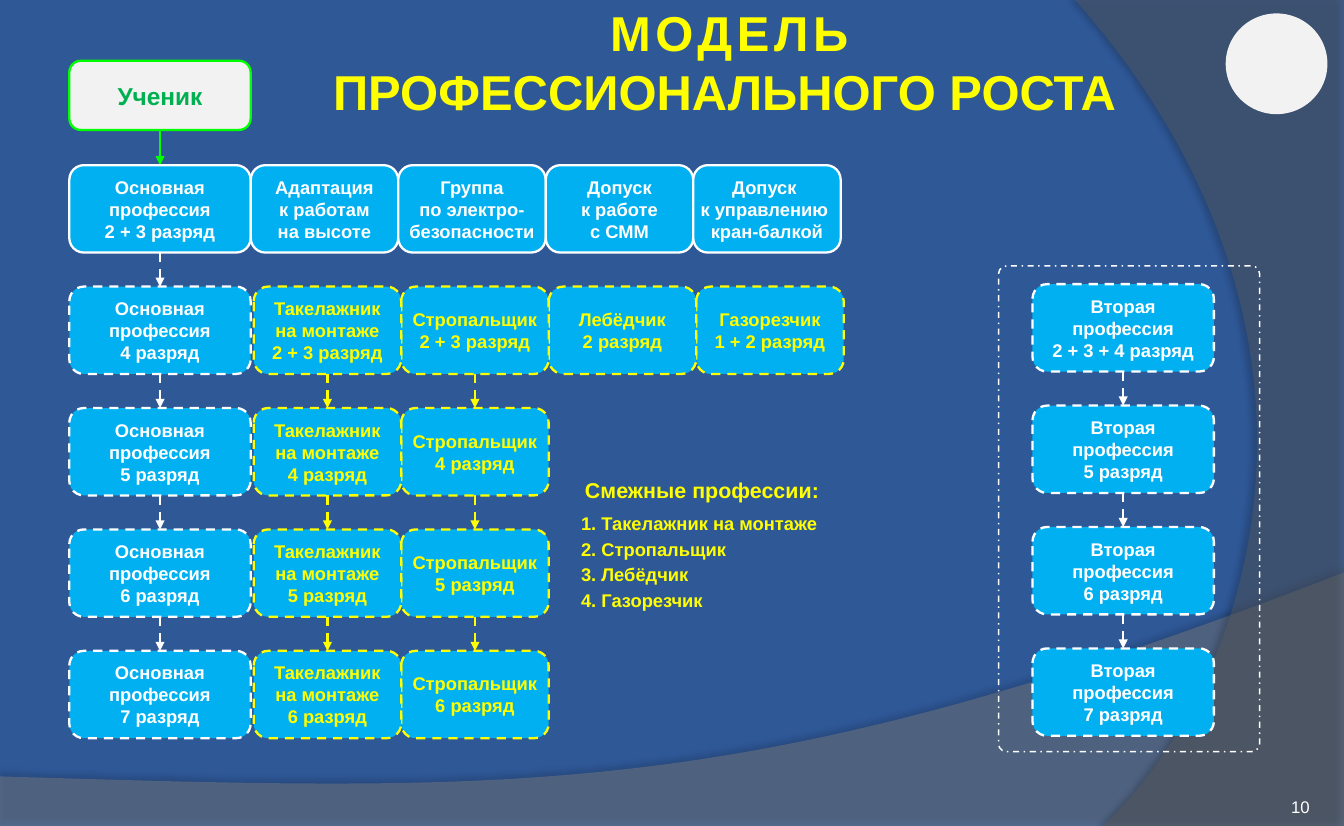
from pptx import Presentation
from pptx.dml.color import RGBColor
from pptx.enum.dml import MSO_LINE
from pptx.enum.shapes import MSO_CONNECTOR, MSO_SHAPE
from pptx.enum.text import MSO_ANCHOR, PP_ALIGN
from pptx.oxml.ns import qn
from pptx.util import Inches, Pt
from lxml.etree import SubElement

NAVY = RGBColor(0x2F, 0x58, 0x97)
SKY = RGBColor(0x00, 0xB0, 0xF0)
WHITE = RGBColor(0xFF, 0xFF, 0xFF)
YELLOW = RGBColor(0xFF, 0xFF, 0x00)
LIME = RGBColor(0x00, 0xFF, 0x00)
GREEN = RGBColor(0x00, 0xB0, 0x50)
PALE = RGBColor(0xF2, 0xF2, 0xF2)
GRAY = RGBColor(0x7F, 0x7F, 0x7F)
DARK_GRAY = RGBColor(0x5E, 0x5E, 0x5E)

WIDTH, HEIGHT = 12.21, 7.5
ORIGIN_X, ORIGIN_Y = 0.63, 1.5
COLUMN, ROW = 1.34, 4.41 / 4
BOX_HEIGHT = 0.72
WIDE = 1.23
RELATED = 1.25
SECOND = 6.53


def curve(start, first, second, end, steps=60):
    points = []
    for step in range(1, steps + 1):
        t = step / steps
        weights = ((1 - t) ** 3, 3 * t * (1 - t) ** 2, 3 * t * t * (1 - t), t ** 3)
        corners = (start, first, second, end)
        points.append(tuple(sum(w * c[axis] for w, c in zip(weights, corners))
                            for axis in (0, 1)))
    return points


class CareerBoard:
    font = "Arial"

    def __init__(self, slide):
        self.slide = slide
        self.shapes = slide.shapes
        slide.background.fill.solid()
        slide.background.fill.fore_color.rgb = NAVY

    def place(self, column, row):
        return Inches(ORIGIN_X + column * COLUMN), Inches(ORIGIN_Y + row * ROW)

    def area(self, column, row, width, height):
        return *self.place(column, row), Inches(width * COLUMN), Inches(height * ROW)

    def set_frame(self, frame, anchor, inset=0.0):
        frame.word_wrap = True
        frame.vertical_anchor = anchor
        frame.margin_left = frame.margin_right = Inches(inset)
        frame.margin_top = frame.margin_bottom = 0

    def add_lines(self, frame, lines, size, ink, align, bold=True):
        for index, text in enumerate(lines):
            paragraph = frame.add_paragraph() if index else frame.paragraphs[0]
            paragraph.alignment = align
            self.add_words(paragraph, text, size, ink, bold)

    def add_words(self, paragraph, text, size, ink, bold=True, spacing=0):
        words = paragraph.add_run()
        words.text = text
        words.font.name = self.font
        words.font.size = Pt(size)
        words.font.bold = bold
        words.font.color.rgb = ink
        if spacing:
            words._r.get_or_add_rPr().set("spc", str(spacing))

    def swoosh(self, points, color, opacity, shadow_opacity, distance, direction):
        (start, *rest) = [(Inches(x * WIDTH / 100), Inches(y * HEIGHT / 100))
                          for x, y in points]
        builder = self.shapes.build_freeform(*start)
        builder.add_line_segments(rest, close=True)
        swoosh = builder.convert_to_shape()
        swoosh.shadow.inherit = False
        swoosh.fill.solid()
        swoosh.fill.fore_color.rgb = color
        swoosh.line.fill.background()
        properties = swoosh._element.spPr
        tint = properties.find(qn("a:solidFill")).find(qn("a:srgbClr"))
        SubElement(tint, qn("a:alpha"), val=str(opacity * 1000))
        shadow = SubElement(properties.find(qn("a:effectLst")), qn("a:outerShdw"),
                            blurRad=str(Pt(4)), dist=str(Pt(distance)),
                            dir=str(direction * 60000), rotWithShape="0")
        shade = SubElement(shadow, qn("a:srgbClr"), val="000000")
        SubElement(shade, qn("a:alpha"), val=str(shadow_opacity * 1000))

    def shape(self, kind, area, fill=None, outline=None, dash=None, weight=1.5):
        shape = self.shapes.add_shape(kind, *self.area(*area))
        shape.shadow.inherit = False
        if fill is None:
            shape.fill.background()
        else:
            shape.fill.solid()
            shape.fill.fore_color.rgb = fill
        if outline is None:
            shape.line.fill.background()
        else:
            shape.line.color.rgb = outline
            shape.line.width = Pt(weight)
            if dash:
                shape.line.dash_style = dash
        return shape

    def box(self, lines, column, row, width=1, ink=WHITE, dash=MSO_LINE.DASH,
            height=BOX_HEIGHT, fill=SKY, outline=None, size=12):
        box = self.shape(MSO_SHAPE.ROUNDED_RECTANGLE, (column, row, width, height),
                         fill, outline or ink, dash)
        self.set_frame(box.text_frame, MSO_ANCHOR.MIDDLE)
        self.add_lines(box.text_frame, lines, size, ink, PP_ALIGN.CENTER)

    def arrow(self, column, top, bottom, color, dash=MSO_LINE.DASH):
        arrow = self.shapes.add_connector(MSO_CONNECTOR.STRAIGHT,
                                          *self.place(column, top),
                                          *self.place(column, bottom))
        arrow.line.color.rgb = color
        arrow.line.width = Pt(1.5)
        if dash:
            arrow.line.dash_style = dash
        properties = arrow._element.spPr
        SubElement(properties.find(qn("a:ln")), qn("a:tailEnd"), type="triangle")
        SubElement(properties, qn("a:effectLst"))

    def ladder(self, name, grades, column, row, width=1, ink=WHITE):
        for step, grade in enumerate(grades):
            if step:
                below = row + step
                self.arrow(column + width / 2, below - 1 + BOX_HEIGHT, below, ink)
            self.box([*name, f"{grade} разряд"], column, row + step, width, ink)

    def label(self, text, area, size, ink, align=PP_ALIGN.LEFT,
              anchor=MSO_ANCHOR.TOP, inset=0.08, bold=True):
        frame = self.shapes.add_textbox(*self.area(*area)).text_frame
        self.set_frame(frame, anchor, inset)
        self.add_lines(frame, [text], size, ink, align, bold)

    def title(self, first, second, area):
        frame = self.shapes.add_textbox(*self.area(*area)).text_frame
        self.set_frame(frame, MSO_ANCHOR.MIDDLE, 0.06)
        heading = frame.paragraphs[0]
        heading.alignment = PP_ALIGN.CENTER
        self.add_words(heading, first, 32, YELLOW, spacing=300)
        heading.add_line_break()
        self.add_words(heading, second, 32, YELLOW)


def main():
    deck = Presentation()
    deck.slide_width, deck.slide_height = Inches(WIDTH), Inches(HEIGHT)
    board = CareerBoard(deck.slides.add_slide(deck.slide_layouts[6]))

    board.swoosh([(0, 94), (0, 100), (100, 100), (100, 69.3),
                  *curve((100, 69.3), (55.9, 97.2), (39.1, 95.9), (0, 94))],
                 GRAY, 45, 35, 3.5, 270)
    board.swoosh([(100, 0), (100, 100), (82.1, 100),
                  *curve((82.1, 100), (93.4, 82.5), (101.7, 40), (80, 0))],
                 DARK_GRAY, 40, 45, 4, 180)
    board.shape(MSO_SHAPE.OVAL, (7.84, -1.25, 0.69, 0.83), PALE)
    board.label("10", (7.65, 5.01, 0.76, 0.36), 11, WHITE, PP_ALIGN.RIGHT,
                MSO_ANCHOR.BOTTOM, 0, False)
    board.title("МОДЕЛЬ", "ПРОФЕССИОНАЛЬНОГО РОСТА ", (1.34, -1.15, 6.3, 0.59))

    board.arrow(WIDE / 2, -0.29, 0, LIME, None)
    board.box(["Ученик"], 0, -0.86, WIDE, GREEN, None, 0.57, PALE, LIME, 16)

    board.box(["Основная", "профессия", "2 + 3 разряд"], 0, 0, WIDE, dash=None)
    board.arrow(WIDE / 2, BOX_HEIGHT, 1, WHITE)
    board.ladder(["Основная", "профессия"], "4567", 0, 1, WIDE)

    permits = [["Адаптация", "к работам", "на высоте"],
               ["Группа", "по электро-", "безопасности"],
               ["Допуск", "к работе", "с СММ"],
               ["Допуск ", "к управлению ", "кран-балкой"]]
    for index, permit in enumerate(permits):
        board.box(permit, WIDE + index, 0, dash=None)

    trades = [(["Газорезчик"], ["1 + 2"], 3),
              (["Лебёдчик"], ["2"], 2),
              (["Стропальщик"], ["2 + 3", "4", "5", "6"], 1),
              (["Такелажник", "на монтаже"], ["2 + 3", "4", "5", "6"], 0)]
    for trade, grades, index in trades:
        board.ladder(trade, grades, RELATED + index, 1, ink=YELLOW)

    board.label("Смежные профессии:", (3.41, 2.57, 1.76, 0.22), 14, YELLOW,
                PP_ALIGN.CENTER)
    related = ["Такелажник на монтаже", "Стропальщик", "Лебёдчик", "Газорезчик"]
    for index, trade in enumerate(related):
        board.label(f"{index + 1}. {trade}", (3.41, 2.86 + 0.21 * index, 1.76, 0.18),
                    12, YELLOW)

    board.ladder(["Вторая", "профессия"], ["2 + 3 + 4", "5", "6", "7"],
                 SECOND, 0.98, WIDE)
    second_frame = board.shape(MSO_SHAPE.ROUNDED_RECTANGLE, (6.3, 0.83, 1.77, 4),
                               None, WHITE, MSO_LINE.DASH_DOT, 1)
    second_frame.adjustments[0] = 0.03

    deck.save("out.pptx")


if __name__ == "__main__":
    main()
